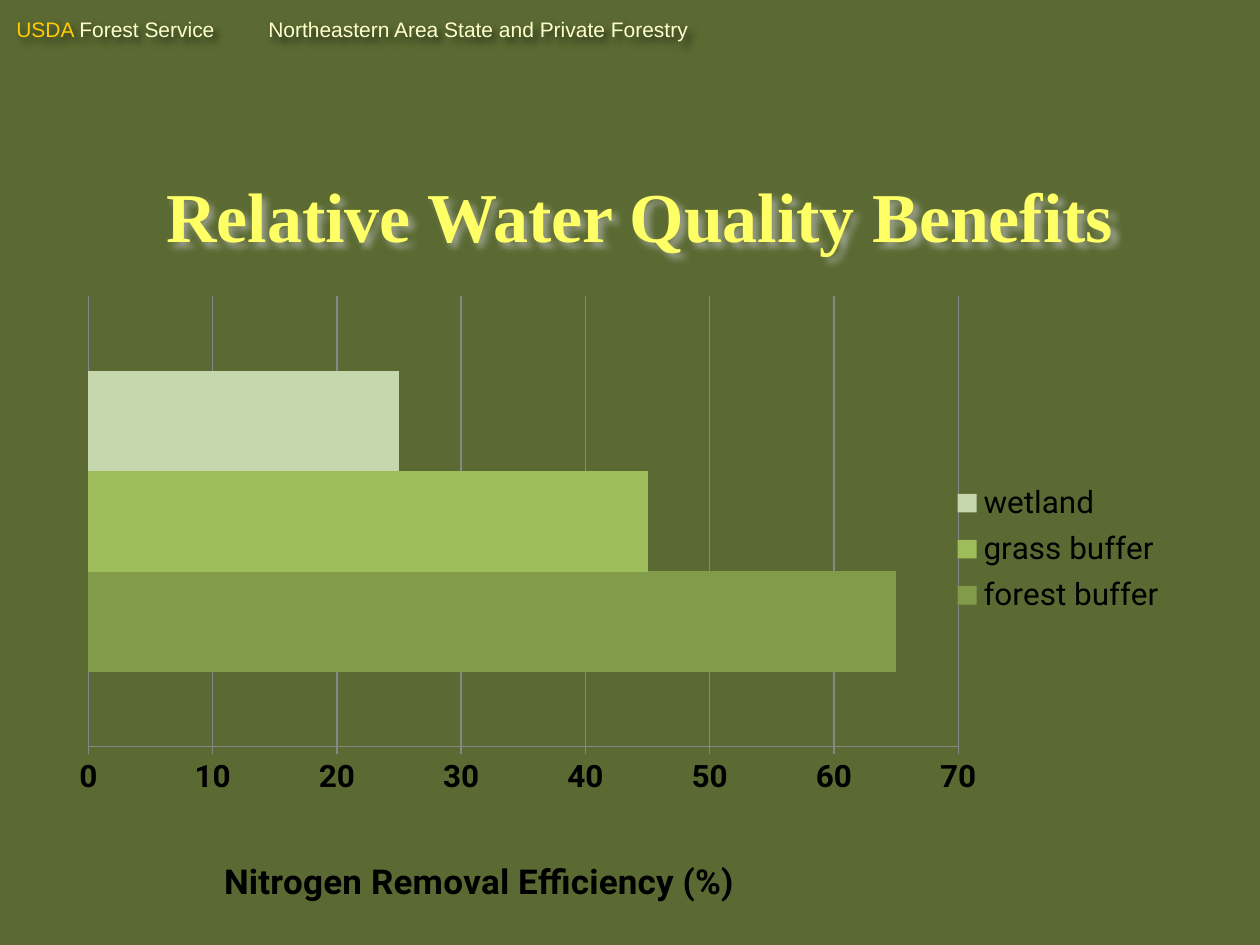
from lxml import etree
from pptx import Presentation
from pptx import util as u
from pptx.chart import data as chart_data
from pptx.dml.color import RGBColor
from pptx.enum import chart as ch, text as tx
from pptx.oxml.ns import qn

COLOURS = {
    "background": "5B6A32", "agency": "FFCC00", "header": "FFFFCC",
    "title": "FFFF66", "label": "000000", "grid": "868686",
    "header shadow": "000000", "title shadow": "C0C0C0",
    "forest buffer": "819B4A", "grass buffer": "9DBD5B", "wetland": "C6D6AD",
}
EFFICIENCY = {"forest buffer": 65, "grass buffer": 45, "wetland": 25}


def colour(name):
    return RGBColor.from_string(COLOURS[name])


def set_font(font, name, size, colour_name, bold=False):
    font.name, font.size, font.bold = name, u.Pt(size), bold
    font.color.rgb = colour(colour_name)


def add_line_of_text(slide, box, runs, font_name, size, bold, align, shadow):
    """Add a text box with one paragraph of (text, colour) runs."""
    holder = slide.shapes.add_textbox(*box)
    frame = holder.text_frame
    frame.word_wrap = True
    frame.vertical_anchor = tx.MSO_ANCHOR.TOP
    frame.margin_left = frame.margin_right = u.Cm(0.13)
    frame.margin_top = frame.margin_bottom = u.Cm(0.13)
    paragraph = frame.paragraphs[0]
    paragraph.alignment = align
    for words, colour_name in runs:
        run = paragraph.add_run()
        run.text = words
        set_font(run.font, font_name, size, colour_name, bold)

    # Soft shadow behind the letters
    effects = etree.SubElement(holder._element.spPr, qn("a:effectLst"))
    outer = etree.SubElement(effects, qn("a:outerShdw"), blurRad="50800",
                             dist="38100", dir="2700000")
    tint = etree.SubElement(outer, qn("a:srgbClr"), val=COLOURS[shadow])
    etree.SubElement(tint, qn("a:alpha"), val="60000")


def add_header(slide, box):
    runs = [("USDA ", "agency"),
            ("Forest Service\tNortheastern Area State and Private Forestry",
             "header")]
    add_line_of_text(slide, box, runs, "Arial", 12, False,
                     tx.PP_ALIGN.LEFT, "header shadow")


def add_title(slide, box):
    add_line_of_text(slide, box, [("Relative Water Quality Benefits", "title")],
                     "Times New Roman", 40, True,
                     tx.PP_ALIGN.CENTER, "title shadow")


def place_in_chart(part, inner=False, **fractions):
    """Fix a chart part at fractions of the chart's width and height."""
    for old in part.findall(qn("c:layout")):
        part.remove(old)
    layout = etree.Element(qn("c:layout"))
    manual = etree.SubElement(layout, qn("c:manualLayout"))
    if inner:
        etree.SubElement(manual, qn("c:layoutTarget"), val="inner")
    for side in "xy":
        etree.SubElement(manual, qn(f"c:{side}Mode"), val="edge")
    for side, fraction in fractions.items():
        etree.SubElement(manual, qn(f"c:{side}"), val=str(fraction))
    leading = [c for c in part if c.tag in (qn("c:tx"), qn("c:legendPos"))]
    part.insert(len(leading), layout)


def add_efficiency_chart(slide, box):
    data = chart_data.CategoryChartData()
    data.categories = ["1"]
    for name, percent in EFFICIENCY.items():
        data.add_series(name, [percent])
    chart = slide.shapes.add_chart(
        ch.XL_CHART_TYPE.BAR_CLUSTERED, *box, data).chart
    chart.has_title = False
    set_font(chart.font, "Roboto", 10, "label")

    # Bars
    plot = chart.plots[0]
    plot.gap_width, plot.overlap = 150, 0
    plot.vary_by_categories = False
    for series in plot.series:
        series.format.fill.solid()
        series.format.fill.fore_color.rgb = colour(series.name)

    # Axes
    chart.category_axis.visible = False
    axis = chart.value_axis
    axis.minimum_scale, axis.maximum_scale, axis.major_unit = 0, 70, 10
    axis.major_tick_mark = ch.XL_TICK_MARK.OUTSIDE
    axis.has_major_gridlines = True
    for line in (axis.format.line, axis.major_gridlines.format.line):
        line.color.rgb = colour("grid")
        line.width = u.Pt(0.75)
    set_font(axis.tick_labels.font, "Roboto", 18, "label", True)
    run = axis.axis_title.text_frame.paragraphs[0].add_run()
    run.text = "Nitrogen Removal Efficiency (%)"
    set_font(run.font, "Roboto", 20, "label", True)

    # Legend
    chart.has_legend = True
    chart.legend.position = ch.XL_LEGEND_POSITION.RIGHT
    chart.legend.include_in_layout = False
    set_font(chart.legend.font, "Roboto", 18, "label")

    # Places within the chart
    root = chart._chartSpace
    place_in_chart(root.xpath(".//c:plotArea")[0], inner=True,
                   x=0.03, y=0.02, w=0.74, h=0.73)
    place_in_chart(root.xpath(".//c:valAx/c:title")[0], x=0.14, y=0.92)
    place_in_chart(root.xpath(".//c:legend")[0], x=0.76, y=0.31, w=0.19, h=0.24)


def main():
    deck = Presentation()
    deck.slide_width, deck.slide_height = u.Cm(25.4), u.Cm(19.05)
    slide = deck.slides.add_slide(deck.slide_layouts[6])
    slide.background.fill.solid()
    slide.background.fill.fore_color.rgb = colour("background")

    add_header(slide, [u.Cm(n) for n in (0.2, 0.2, 24.92, 0.74)])
    add_title(slide, [u.Cm(n) for n in (1.47, 3.35, 22.86, 3.68)])
    add_efficiency_chart(slide, [u.Cm(n) for n in (1.07, 5.72, 23.7, 12.7)])
    deck.save("out.pptx")


if __name__ == "__main__":
    main()
